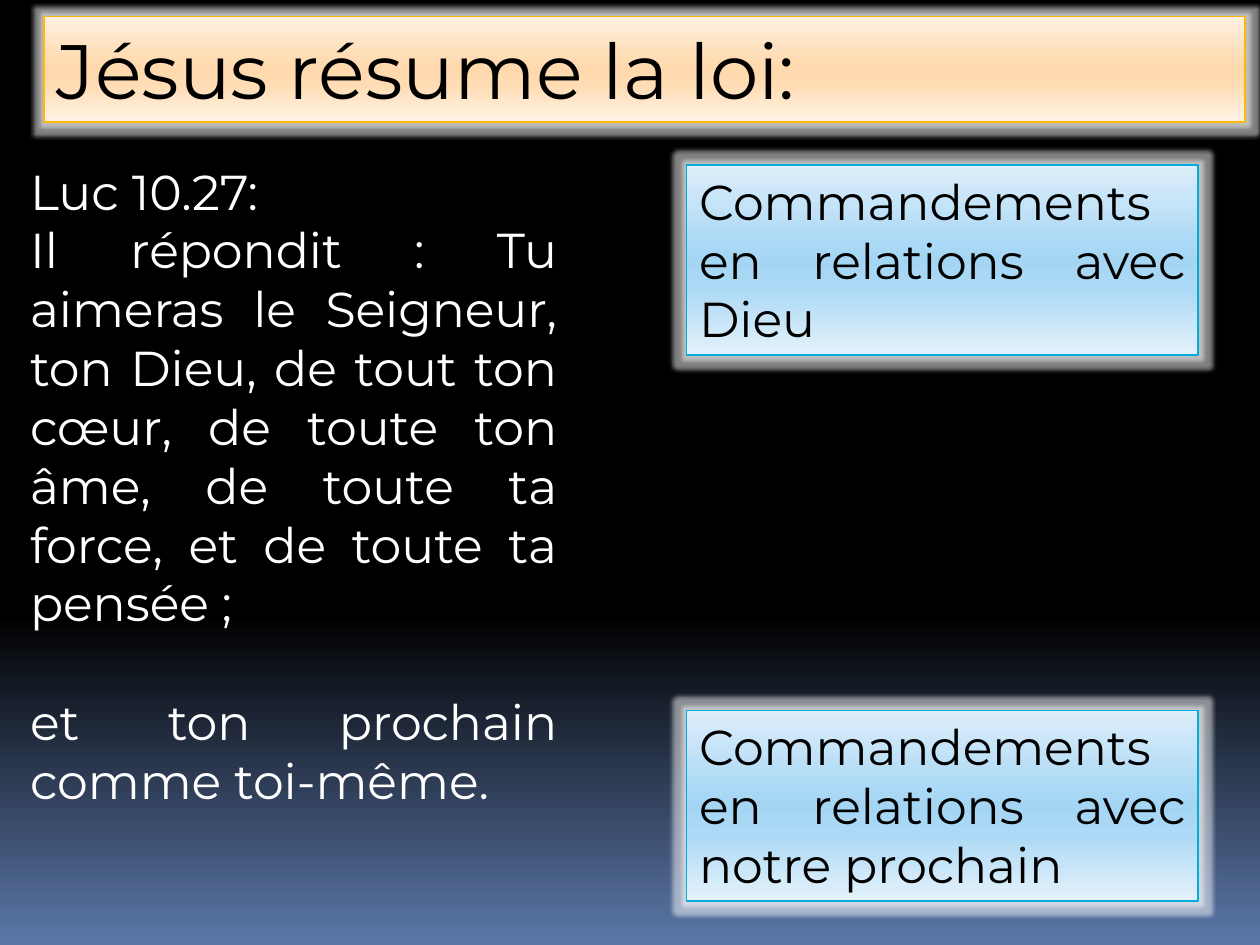
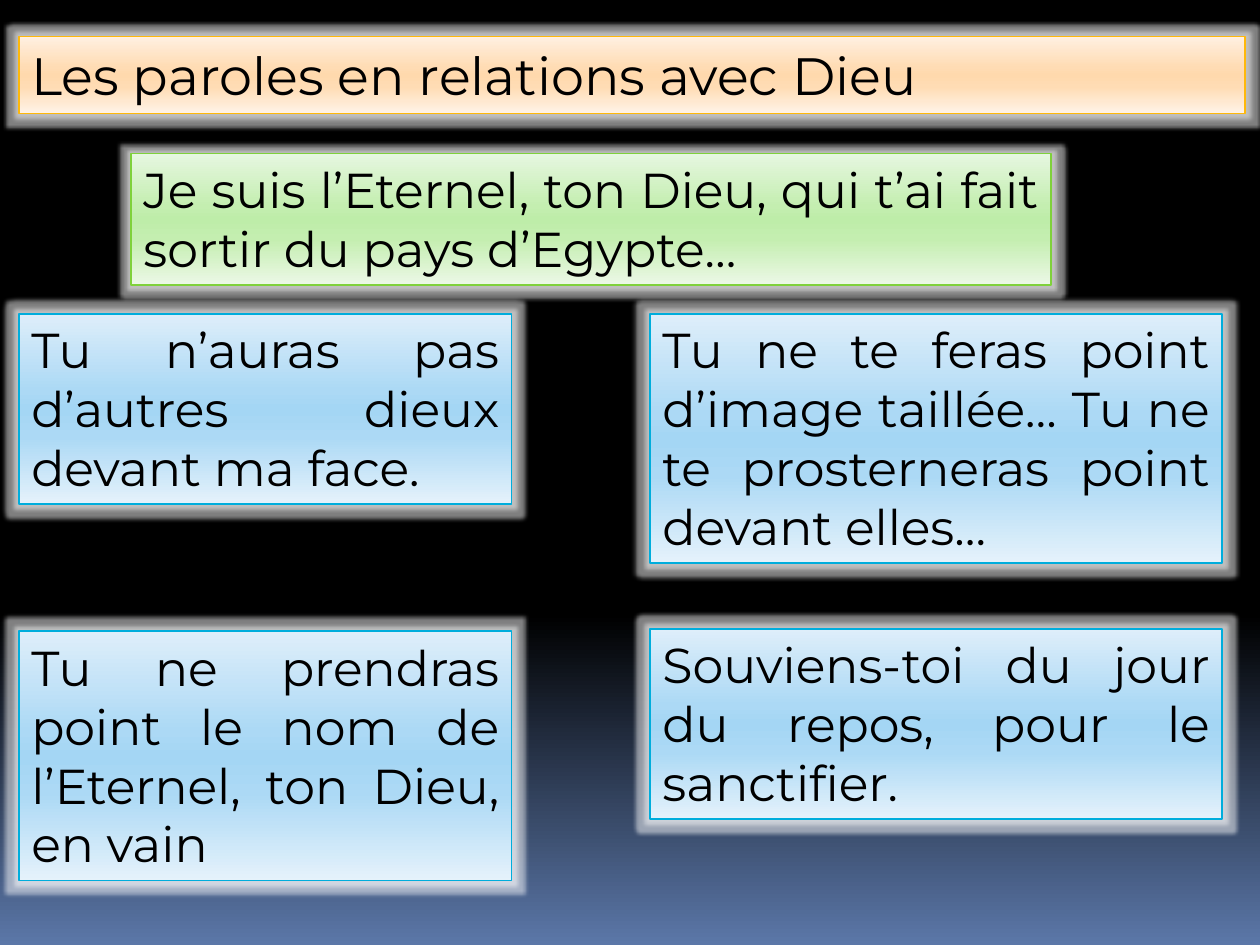
from lxml import etree
from pptx import Presentation
from pptx.dml.color import RGBColor
from pptx.enum.shapes import MSO_SHAPE
from pptx.enum.text import MSO_ANCHOR, MSO_AUTO_SIZE, PP_ALIGN
from pptx.oxml.ns import qn
from pptx.util import Inches, Pt

RECTANGLE = MSO_SHAPE.RECTANGLE
JUSTIFY = PP_ALIGN.JUSTIFY
TOP = MSO_ANCHOR.TOP
GROW = MSO_AUTO_SIZE.SHAPE_TO_FIT_TEXT

FONT = "Montserrat"
BODY_SIZE = 28
BLACK, WHITE = "000000", "FFFFFF"
NIGHT_SKY = [(0, BLACK), (65, BLACK), (100, "5B77A8")]

# Each theme: border colour, then the colours of the fill from top to bottom
PANEL_STOPS = (0, 40, 50, 65, 100)
ORANGE = ("FEB80A", ("FFF0E1", "FFDCB4", "FFD9AD", "FFDCB4", "FFF3E7"))
BLUE = ("00ADDC", ("DEEEFA", "ACD9F5", "A4D6F4", "ACD9F5", "E5F2FB"))
GREEN = ("7FD13B", ("E6F7E0", "C4EEB0", "BEEDA9", "C4EEB0", "ECF8E6"))

LINE_HEIGHT = 0.47
PADDING = 0.1
LEFT_MARGIN = 0.15
TITLE_RIGHT = 9.88


def rgb(hex_colour):
    return RGBColor.from_string(hex_colour)


def add_colour(parent, hex_colour):
    return etree.SubElement(parent, qn("a:srgbClr"), val=hex_colour)


def fill_downwards(fill, element, stops):
    """Give fill, which lives in element, a vertical gradient of (percent, colour) stops."""
    fill.gradient()
    fill.gradient_angle = 270
    stop_list = next(element.iter(qn("a:gsLst")))
    for default_stop in list(stop_list):
        stop_list.remove(default_stop)
    for percent, colour in stops:
        stop = etree.SubElement(stop_list, qn("a:gs"), pos=str(percent * 1000))
        add_colour(stop, colour)


def add_glow(shape):
    effects = shape._element.spPr.find(qn("a:effectLst"))
    glow = etree.SubElement(effects, qn("a:glow"), rad=str(Pt(5)))
    etree.SubElement(add_colour(glow, WHITE), qn("a:alpha"), val="50000")


def write(shape, paragraphs, size, colour):
    frame = shape.text_frame
    frame.word_wrap = True
    frame.auto_size = GROW
    frame.vertical_anchor = TOP
    frame.text = "\n".join(paragraphs)
    for paragraph in frame.paragraphs:
        paragraph.alignment = JUSTIFY
        paragraph.font.name = FONT
        paragraph.font.size = Pt(size)
        paragraph.font.color.rgb = rgb(colour)
    return frame


def add_panel(slide, theme, text, left, top, width, height, size=BODY_SIZE):
    border, shades = theme
    panel = slide.shapes.add_shape(
        RECTANGLE, Inches(left), Inches(top), Inches(width), Inches(height))
    fill_downwards(panel.fill, panel._element, zip(PANEL_STOPS, shades))
    panel.line.color.rgb = rgb(border)
    panel.line.width = Pt(0.94)
    panel.shadow.inherit = False
    add_glow(panel)
    write(panel, [text], size, BLACK)


def add_verse_panel(slide, theme, text, left, top, width, lines):
    """Add a panel just high enough for its lines of body text."""
    add_panel(slide, theme, text, left, top, width, PADDING + lines * LINE_HEIGHT)


def add_title(slide, text, left, top, height, size):
    add_panel(slide, ORANGE, text, left, top, TITLE_RIGHT - left, height, size)


def add_scripture(slide, paragraphs):
    """Add the white quotation, its last paragraph set apart by one line."""
    box = slide.shapes.add_textbox(Inches(0.14), Inches(1.23), Inches(4.38), Inches(5.76))
    frame = write(box, paragraphs, BODY_SIZE, WHITE)
    frame.paragraphs[-1].space_before = Pt(34)


def add_night_slide(prs):
    slide = prs.slides.add_slide(prs.slide_layouts[6])
    fill_downwards(slide.background.fill, slide._element, NIGHT_SKY)
    return slide


def build_summary(prs):
    slide = add_night_slide(prs)
    add_scripture(slide, [
        "Luc 10.27:",
        "Il répondit : Tu aimeras le Seigneur, ton Dieu, de tout ton cœur, "
        "de toute ton âme, de toute ta force, et de toute ta pensée ;",
        "et ton prochain comme toi-même.",
    ])
    add_title(slide, "Jésus résume la loi:", 0.35, 0.13, 0.84, 44)
    for relation, top in (("Dieu", 1.31), ("notre prochain", 5.64)):
        add_verse_panel(slide, BLUE, f"Commandements en relations avec {relation}",
                        5.45, top, 4.06, 3)


def build_words_about_god(prs):
    slide = add_night_slide(prs)
    add_verse_panel(slide, GREEN,
                    "Je suis l’Eternel, ton Dieu, qui t’ai fait sortir du pays d’Egypte…",
                    1.04, 1.22, 7.3, 2)
    add_title(slide, "Les paroles en relations avec Dieu", LEFT_MARGIN, 0.29, 0.61, 30)

    left_column, right_column = (LEFT_MARGIN, 3.91), (5.16, 4.54)
    commandments = [
        (left_column, 2.49, 3, "Tu n’auras pas d’autres dieux devant ma face."),
        (right_column, 2.49, 4, "Tu ne te feras point d’image taillée… "
                                "Tu ne te prosterneras point devant elles…"),
        (left_column, 5.01, 4, "Tu ne prendras point le nom de l’Eternel, ton Dieu, en vain"),
        (right_column, 4.99, 3, "Souviens-toi du jour du repos, pour le sanctifier."),
    ]
    for (left, width), top, lines, commandment in commandments:
        add_verse_panel(slide, BLUE, commandment, left, top, width, lines)


def main():
    prs = Presentation()
    prs.slide_width, prs.slide_height = Inches(10), Inches(7.5)
    build_summary(prs)
    build_words_about_god(prs)
    prs.save("out.pptx")


if __name__ == "__main__":
    main()
